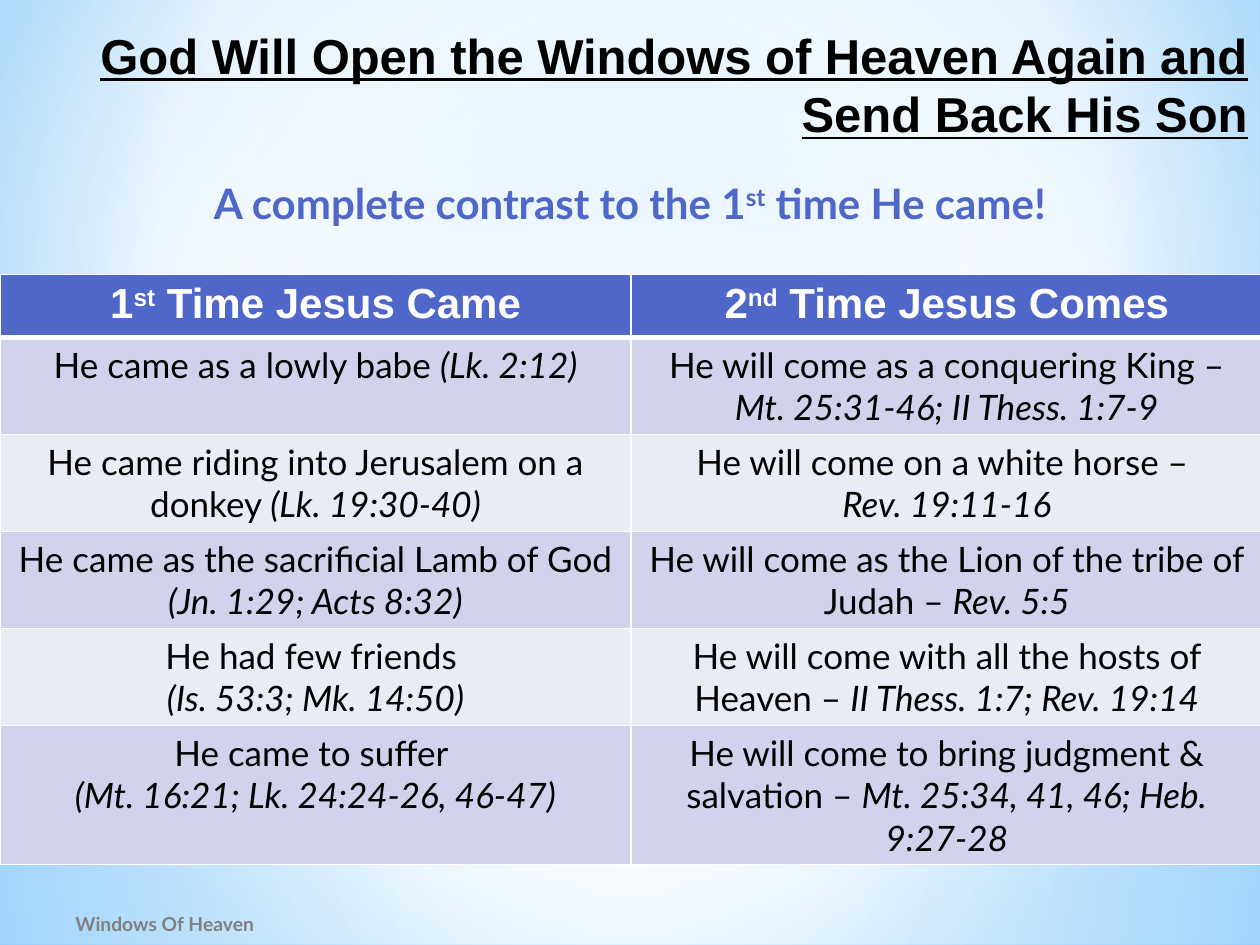
from lxml import etree
from pptx import Presentation
from pptx import util as u
from pptx.dml.color import RGBColor
from pptx.enum import shapes, text
from pptx.oxml import parse_xml
from pptx.oxml.ns import nsdecls, qn

Inches = u.Inches
WHITE, BLACK, BLUE, GREY = "FFFFFF", "000000", "4E67C8", "808080"
BANDS = ("D0D3EB", "E9EBF5")
CENTER, RIGHT = text.PP_ALIGN.CENTER, text.PP_ALIGN.RIGHT
MIDDLE_RECT = (50, 50, 50, 50)

HEADERS = [("1", "st", " Time Jesus Came"), ("2", "nd", " Time Jesus Comes")]
CONTRASTS = [
    ([("He came as a lowly babe ", "(Lk. 2:12)")],
     [("He will come as a conquering King – ", "Mt. 25:31-46; II Thess. 1:7-9")]),
    ([("He came riding into Jerusalem on a donkey ", "(Lk. 19:30-40)")],
     [("He will come on a white horse – ",), ("", "Rev. 19:11-16")]),
    ([("He came as the sacrificial Lamb of God",), ("", "(Jn. 1:29; Acts 8:32)")],
     [("He will come as the Lion of the tribe of Judah – ", "Rev. 5:5")]),
    ([("He had few friends ",), ("", "(Is. 53:3; Mk. 14:50)")],
     [("He will come with all the hosts of Heaven – ", "II Thess. 1:7; Rev. 19:14")]),
    ([("He came to suffer ",), ("", "(Mt. 16:21; Lk. 24:24-26, 46-47)")],
     [("He will come to bring judgment & salvation – ",
       "Mt. 25:34, 41, 46; Heb. 9:27-28")]),
]


def color(value):
    """Turn a hex string into a colour."""
    return RGBColor.from_string(value)


def set_gradient(fill, owner, stops, center=None, angle=0):
    """Give a fill a circular gradient, or a linear one when no center is set."""
    fill.gradient()
    old = next(owner.iter(qn("a:gradFill")))
    marks = "".join(
        f'<a:gs pos="{place * 1000}"><a:srgbClr val="{value}">'
        f'<a:alpha val="{opacity * 1000}"/></a:srgbClr></a:gs>'
        for place, value, opacity in stops)
    if center:
        sides = " ".join(f'{side}="{part * 1000}"' for side, part in zip("ltrb", center))
        way = f'<a:path path="circle"><a:fillToRect {sides}/></a:path>'
    else:
        way = f'<a:lin ang="{angle * 60000}" scaled="0"/>'
    old.getparent().replace(old, parse_xml(
        f'<a:gradFill {nsdecls("a")} rotWithShape="1"><a:gsLst>{marks}</a:gsLst>{way}</a:gradFill>'))


def write_paragraphs(frame, paragraphs, look, accent=None, align=None):
    """Write paragraphs whose every second piece is italic or superscript."""
    for row, pieces in enumerate(paragraphs):
        para = frame.paragraphs[0] if row == 0 else frame.add_paragraph()
        para.alignment = align
        for index, piece in enumerate(pieces):
            if not piece:
                continue
            span = para.add_run()
            span.text = piece
            for name, value in look.items():
                if name == "color":
                    span.font.color.rgb = color(value)
                else:
                    setattr(span.font, name, value)
            if index % 2 and accent == "italic":
                span.font.italic = True
            elif index % 2:
                span.font._element.set("baseline", "30000")


def add_backdrop(page):
    """Lay the sky gradient and its soft glows behind the page."""
    set_gradient(page.background.fill, page._element,
                 [(0, "9ED5FF", 100), (60, WHITE, 100), (100, "5BB9FF", 100)],
                 (20, 10, 20, 60))
    rect, oval = shapes.MSO_SHAPE.RECTANGLE, shapes.MSO_SHAPE.OVAL
    pale = "B4DCFA"
    glows = [
        (rect, 5.58, 1.92, [(0, WHITE, 91), (37, WHITE, 76), (100, pale, 79)], MIDDLE_RECT),
        (rect, 0, 5.58, [(0, WHITE, 89), (48, WHITE, 62), (100, pale, 79)], MIDDLE_RECT),
        (rect, 4.12, 2.5, [(0, WHITE, 0), (29, WHITE, 30), (45, pale, 40),
                           (55, WHITE, 26), (65, pale, 60), (100, WHITE, 0)], None),
        (oval, 1.75, 5.58, [(0, WHITE, 100), (56, WHITE, 0)], MIDDLE_RECT),
    ]
    for kind, top, height, stops, center in glows:
        glow = page.shapes.add_shape(kind, 0, Inches(top), Inches(10), Inches(height))
        glow.shadow.inherit = False
        glow.line.fill.background()
        set_gradient(glow.fill, glow._element, stops, center, angle=90)


def add_label(page, box, pieces, look, align=None, anchor=text.MSO_ANCHOR.TOP):
    """Place one paragraph of wrapped text in a box."""
    frame = page.shapes.add_textbox(*map(Inches, box)).text_frame
    frame.word_wrap = True
    frame.vertical_anchor = anchor
    write_paragraphs(frame, [pieces], look, align=align)


def set_borders(cell, widths):
    """Draw white cell borders with a width in points for each side."""
    props = cell._tc.get_or_add_tcPr()
    for index, (side, width) in enumerate(widths.items()):
        line = etree.Element(qn(f"a:ln{side}"), w=str(u.Pt(width)))
        paint = etree.SubElement(line, qn("a:solidFill"))
        etree.SubElement(paint, qn("a:srgbClr"), val=WHITE)
        props.insert(index, line)


def add_contrast_table(page, box):
    """Place the table that sets the two comings side by side."""
    rows = [[[pieces] for pieces in HEADERS], *CONTRASTS]
    table = page.shapes.add_table(len(rows), 2, *map(Inches, box)).table
    for column in table.columns:
        column.width = Inches(box[2] / 2)
    for row, height in zip(table.rows, [0.49] + [0.77] * 4 + [1.1]):
        row.height = Inches(height)
    head = dict(size=u.Pt(24), name="Arial", color=WHITE, bold=True)
    body = dict(size=u.Pt(20), name="Lato", color=BLACK, bold=False)
    for r, row in enumerate(rows):
        for c, paragraphs in enumerate(row):
            cell = table.cell(r, c)
            cell.fill.solid()
            cell.fill.fore_color.rgb = color(BANDS[(r - 1) % 2] if r else BLUE)
            set_borders(cell, dict(L=1, R=1, T=3 if r == 1 else 1, B=1 if r else 3))
            write_paragraphs(cell.text_frame, paragraphs, body if r else head,
                             "italic" if r else "superscript", CENTER)


def main():
    """Build the slide and save the deck."""
    deck = Presentation()
    deck.slide_width, deck.slide_height = Inches(10), Inches(7.5)
    page = deck.slides.add_slide(deck.slide_layouts[6])
    middle = text.MSO_ANCHOR.MIDDLE
    add_backdrop(page)
    add_label(page, (0.5, 7.16, 3.67, 0.34), ["Windows Of Heaven"],
              dict(size=u.Pt(11), name="Lato", color=GREY, bold=True), anchor=middle)
    add_label(page, (0, 0.12, 10, 1.09),
              ["God Will Open the Windows of Heaven Again and Send Back His Son"],
              dict(size=u.Pt(28), name="Arial", color=BLACK, bold=True, underline=True),
              RIGHT, middle)
    add_label(page, (-0.02, 1.36, 10.04, 0.5),
              ["A complete contrast to the 1", "st", " time He came!"],
              dict(size=u.Pt(24), name="Lato", color=BLUE, bold=True), CENTER)
    add_contrast_table(page, (0, 2.18, 10.02, 4.67))
    deck.save("out.pptx")


if __name__ == "__main__":
    main()
